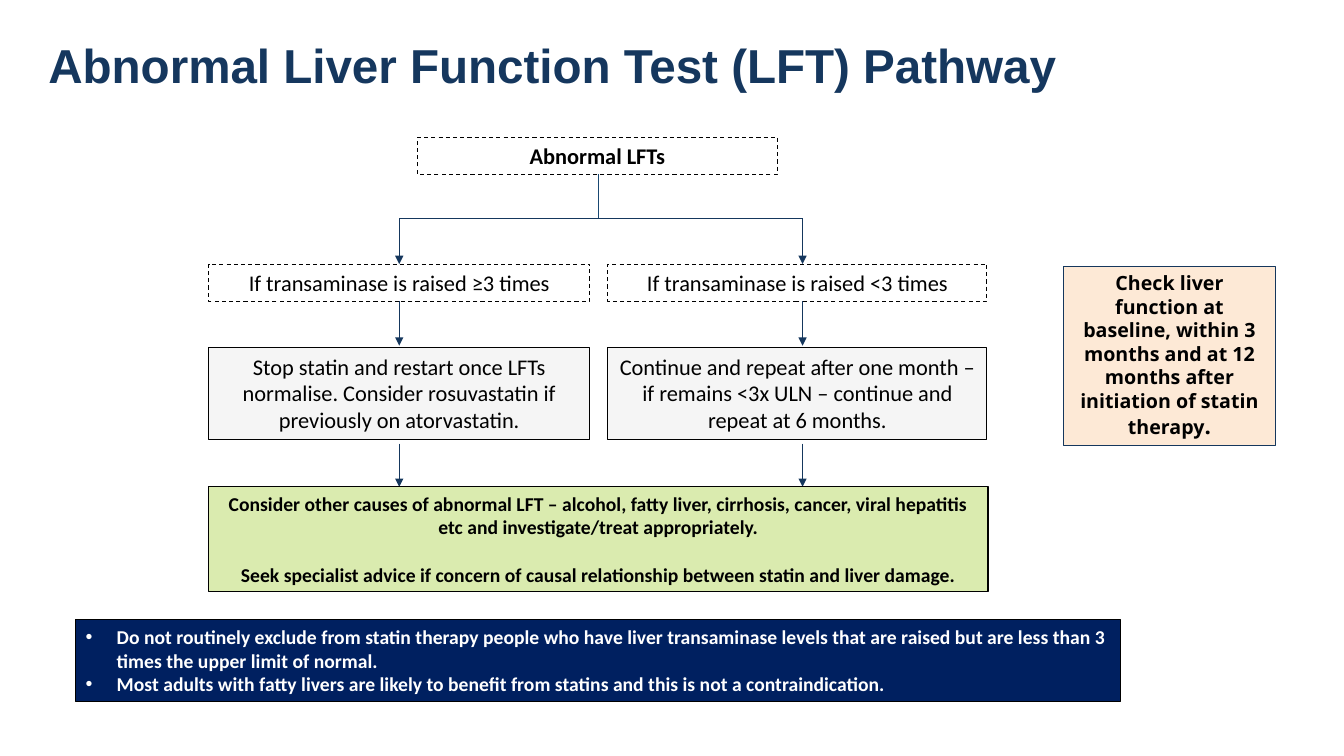
from lxml import etree
from pptx import Presentation, util as u
from pptx.dml.color import RGBColor
from pptx.enum import dml, shapes, text
from pptx.oxml.ns import qn

PX = 9144  # EMU per px, 100 px to the inch
HUES = {
    "navy": "15375E", "edge": "15375D", "stem": "194871", "deep": "002060",
    "black": "000000", "white": "FFFFFF", "grey": "F5F5F5",
    "peach": "FDE9D6", "green": "A3CD38",
}


def hue(name):
    return RGBColor.from_string(HUES[name])


def px(*sizes):
    return [u.Emu(size * PX) for size in sizes]


def style(para, size, ink="black", bold=False, face="Calibri"):
    for run in para.runs:
        font = run.font
        font.name, font.size, font.bold = face, u.Pt(size), bold
        font.color.rgb = hue(ink)


def bullet(para, indent):
    props = para._p.get_or_add_pPr()
    props.set("marL", str(indent * PX))
    props.set("indent", str(-indent * PX))
    etree.SubElement(props, qn("a:buFont")).set("typeface", "Arial")
    etree.SubElement(props, qn("a:buChar")).set("char", "•")


def panel(slide, box, lines, size=16, fill=None, edge="black", dash=False,
          align=text.PP_ALIGN.CENTER, **look):
    """Draw a bordered box with one paragraph per line of text."""
    shape = slide.shapes.add_shape(shapes.MSO_SHAPE.RECTANGLE, *px(*box))
    shape.shadow.inherit = False
    if fill:
        shape.fill.solid()
        shape.fill.fore_color.rgb = hue(fill)
    else:
        shape.fill.background()
    shape.line.color.rgb = hue(edge)
    shape.line.width = u.Pt(0.75)
    if dash:
        shape.line.dash_style = dml.MSO_LINE.DASH
    frame = shape.text_frame
    frame.word_wrap = True
    frame.auto_size = text.MSO_AUTO_SIZE.SHAPE_TO_FIT_TEXT
    frame.vertical_anchor = text.MSO_ANCHOR.TOP
    frame.text = "\n".join(lines)
    for para in frame.paragraphs:
        para.alignment = align
        style(para, size, **look)
    return shape


def link(slide, x1, y1, x2, y2, ink="edge", arrow=True):
    line = slide.shapes.add_connector(
        shapes.MSO_CONNECTOR.STRAIGHT, *px(x1, y1, x2, y2))
    line.line.color.rgb = hue(ink)
    line.line.width = u.Pt(0.5)
    if arrow:
        etree.SubElement(line.line._ln, qn("a:tailEnd")).set("type", "triangle")
    etree.SubElement(line._element.spPr, qn("a:effectLst"))


def heading(slide, box):
    title = slide.shapes.title
    title.left, title.top, title.width, title.height = px(*box)
    frame = title.text_frame
    frame.text = "Abnormal Liver Function Test (LFT) Pathway"
    frame.margin_left = frame.margin_right = 0
    frame.margin_top = frame.margin_bottom = 0
    frame.word_wrap = True
    frame.auto_size = text.MSO_AUTO_SIZE.NONE
    frame.vertical_anchor = text.MSO_ANCHOR.TOP
    para = frame.paragraphs[0]
    para.alignment = text.PP_ALIGN.LEFT
    para.line_spacing = 0.9
    style(para, 34, "navy", True, "Arial")


def branch(slide, box, axis, test, action):
    """Draw a test, its action and the arrows down through them."""
    left, top, width, high = box
    link(slide, axis, top - 45, axis, top)
    panel(slide, (left, top, width, 37), [test], dash=True)
    link(slide, axis, top + 37, axis, top + 81)
    panel(slide, (left, top + 83, width, 91), [action], fill="grey")
    link(slide, axis, top + 178, axis, top + high)


def pathway(slide, box):
    left, top, width, high = box
    # Start box and fork
    stem, bar = left + 386, top + 81
    west, east = left + 189, left + 589
    panel(slide, (left + 207, top, 357, 37), ["Abnormal LFTs"],
          dash=True, bold=True)
    link(slide, stem, top + 37, stem, bar, "stem", False)
    link(slide, west, bar, east, bar, arrow=False)
    # Two branches
    branch(slide, (left, top + 126, 378, 221), west,
           "If transaminase is raised ≥3 times",
           "Stop statin and restart once LFTs normalise. Consider "
           "rosuvastatin if previously on atorvastatin.")
    branch(slide, (left + 396, top + 126, 376, 221), east,
           "If transaminase is raised <3 times",
           "Continue and repeat after one month – if remains <3x ULN – "
           "continue and repeat at 6 months.")
    # Shared outcome
    end = panel(slide, (left, top + 347, width, high - 347), [
        "Consider other causes of abnormal LFT – alcohol, fatty liver, "
        "cirrhosis, cancer, viral hepatitis etc and investigate/treat "
        "appropriately.",
        "Seek specialist advice if concern of causal relationship between "
        "statin and liver damage.",
    ], 14, "green", bold=True)
    tint = end._element.spPr.find(qn("a:solidFill"))[0]
    etree.SubElement(tint, qn("a:alpha")).set("val", "40000")
    end.text_frame.paragraphs[1].space_before = u.Pt(17)


def check(slide, box):
    note = panel(slide, box, [
        "Check liver function at baseline, within 3 months and at 12 months "
        "after initiation of statin therapy"
    ], 14, "peach", "edge", bold=True, face="Open Sans")
    para = note.text_frame.paragraphs[0]
    stop = para.add_run()
    stop.text = "."
    style(para, 14, bold=True, face="Open Sans")
    stop.font.size = u.Pt(16)


def advice(slide, box):
    note = panel(slide, box, [
        "Do not routinely exclude from statin therapy people who have liver "
        "transaminase levels that are raised but are less than 3 times the "
        "upper limit of normal.",
        "Most adults with fatty livers are likely to benefit from statins "
        "and this is not a contraindication.",
    ], 14, "deep", align=text.PP_ALIGN.LEFT, ink="white", bold=True)
    for para in note.text_frame.paragraphs:
        bullet(para, 31)


def main():
    deck = Presentation()
    deck.slide_width, deck.slide_height = px(1333, 750)
    slide = deck.slides.add_slide(deck.slide_layouts[5])
    heading(slide, (48, 42, 1236, 48))
    check(slide, (1055, 264, 210, 178))
    advice(slide, (75, 615, 1036, 81))
    pathway(slide, (207, 136, 773, 451))
    deck.save("out.pptx")


if __name__ == "__main__":
    main()
